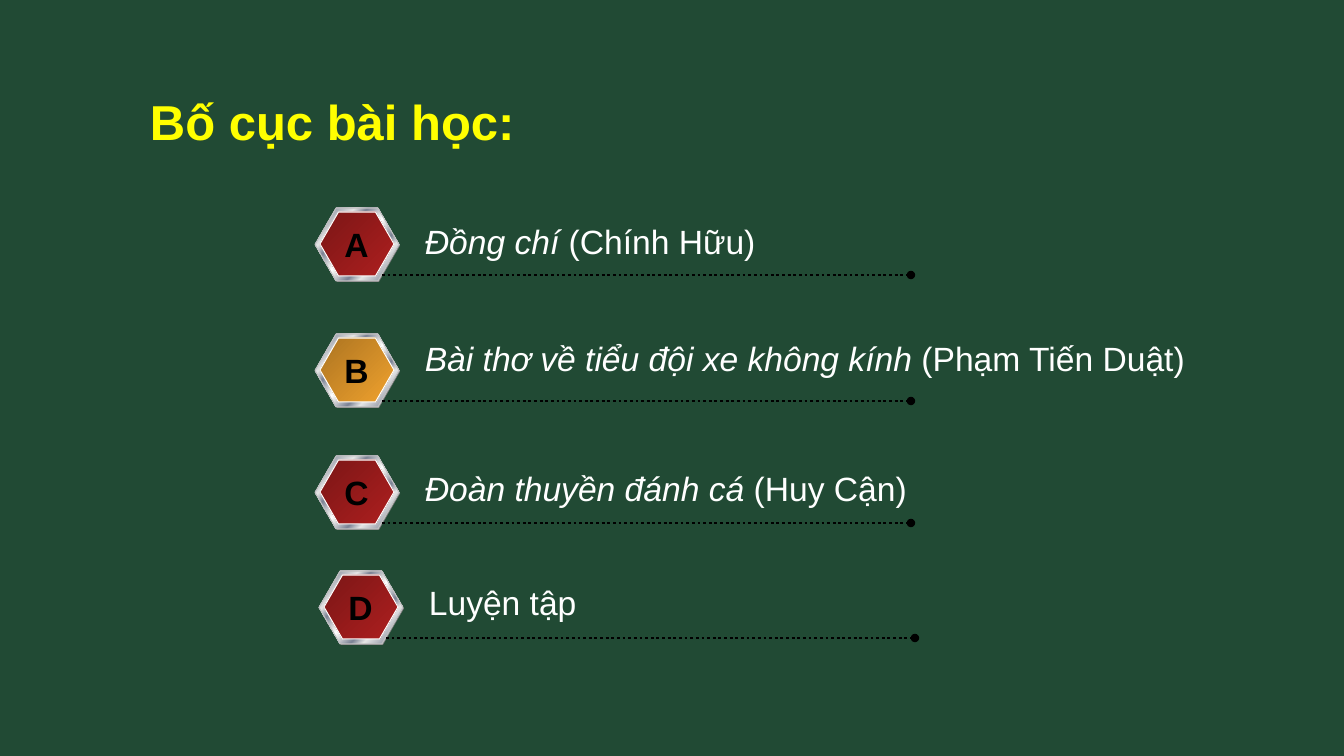
from lxml import etree
from pptx import Presentation
from pptx.dml.color import RGBColor as RGB
from pptx.enum.dml import MSO_LINE as Dash
from pptx.enum.shapes import MSO_CONNECTOR as Link, MSO_SHAPE as Shape
from pptx.enum.text import MSO_ANCHOR as Anchor, MSO_AUTO_SIZE as Fit, PP_ALIGN as Align
from pptx.oxml.ns import qn
from pptx.util import Emu, Pt

TITLE = "Bố cục bài học:"

GREEN = RGB(0x21, 0x4A, 0x34)
YELLOW = RGB(0xFF, 0xFF, 0x00)
WHITE = RGB(0xFF, 0xFF, 0xFF)
BLACK = RGB(0x00, 0x00, 0x00)
GREY = RGB(0x80, 0x80, 0x80)
SILVER = RGB(0xC0, 0xC0, 0xC0)
LIGHT = RGB(0xE6, 0xE6, 0xE6)
STEEL = RGB(0x7D, 0x84, 0x96)

RED_FADE = [(0, RGB(0x7C, 0x16, 0x16)), (100, RGB(0xAD, 0x1F, 0x1F))]
GOLD_FADE = [(0, RGB(0xAC, 0x74, 0x21)), (100, RGB(0xF0, 0xA2, 0x2E))]
CHROME = [(0, LIGHT), (7, STEEL), (26, LIGHT), (34, STEEL), (46, LIGHT), (50, WHITE),
          (54, LIGHT), (66, STEEL), (74, LIGHT), (93, STEEL), (100, LIGHT)]

# letter, italic part, upright part, left, top, text top, text width, fade
ROWS = [
    ("A", "Đồng chí ", "(Chính Hữu)", 315, 208, 216, 354, RED_FADE),
    ("B", "Bài thơ về tiểu đội xe không kính ", "(Phạm Tiến Duật)", 315, 334, 333, 789, GOLD_FADE),
    ("C", "Đoàn thuyền đánh cá ", "(Huy Cận)", 315, 456, 463, 507, RED_FADE),
    ("D", "", "Luyện tập", 319, 571, 577, 169, RED_FADE),
]


def px(*sizes):
    return [Emu(round(size * 914400 / 100.8)) for size in sizes]


def fade(shape, stops):
    """Fill the shape with a gradient running down to the right."""
    shape.fill.gradient()
    grad = shape._element.spPr.find(qn("a:gradFill"))
    for child in list(grad):
        grad.remove(child)
    group = etree.SubElement(grad, qn("a:gsLst"))
    for place, color in stops:
        stop = etree.SubElement(group, qn("a:gs"), pos=str(place * 1000))
        etree.SubElement(stop, qn("a:srgbClr"), val=str(color))
    etree.SubElement(grad, qn("a:lin"), ang="2700000", scaled="1")


def hexagon(shapes, box, fill, edge=None):
    shape = shapes.add_shape(Shape.HEXAGON, *px(*box))
    shape.adjustments[0] = 0.289
    shape.shadow.inherit = False
    if isinstance(fill, list):
        fade(shape, fill)
    else:
        shape.fill.solid()
        shape.fill.fore_color.rgb = fill
    if edge is None:
        shape.line.fill.background()
    else:
        shape.line.color.rgb = edge
        shape.line.width = Pt(0.75)


def dots(shapes, left, right, y):
    """Draw a dotted rule that ends in a round dot."""
    rule = shapes.add_connector(Link.STRAIGHT, *px(left, y, right, y))
    rule.line.color.rgb = BLACK
    rule.line.width = Pt(2)
    rule.line.dash_style = Dash.ROUND_DOT
    etree.SubElement(rule.line._get_or_add_ln(), qn("a:tailEnd"), type="oval")
    etree.SubElement(rule._element.spPr, qn("a:effectLst"))


def label(shapes, box, runs, size, color, bold=False, wrap=False):
    """Add a text box; runs are pairs of text and italic."""
    frame = shapes.add_textbox(*px(*box)).text_frame
    frame.word_wrap = wrap
    frame.auto_size = Fit.NONE if wrap else Fit.SHAPE_TO_FIT_TEXT
    para = frame.paragraphs[0]
    para.font.name = "Arial"
    para.font.size = Pt(size)
    para.font.bold = bold
    para.font.color.rgb = color
    for text, slant in runs:
        if text:
            run = para.add_run()
            run.text = text
            run.font.italic = slant
    return frame


def add_row(slide, letter, work, rest, left, top, text_top, width, stops):
    shapes = slide.shapes.add_group_shape().shapes
    hexagon(shapes, (left + 1, top + 1, 84, 73), GREY)
    hexagon(shapes, (left, top, 84, 73), CHROME, SILVER)
    hexagon(shapes, (left + 5, top + 4, 74, 64), stops, WHITE)
    dots(shapes, left + 67, left + 596, top + 67)
    label(shapes, (left + 100, text_top, width, 51), [(work, True), (rest, False)], 24, WHITE)
    mark = label(shapes, (left + 19, top + 11, 45, 51), [(letter, False)], 24, BLACK, bold=True)
    mark.paragraphs[0].alignment = Align.CENTER


def main():
    deck = Presentation()
    deck.slide_width, deck.slide_height = px(1344, 756)
    slide = deck.slides.add_slide(deck.slide_layouts[6])
    slide.background.fill.solid()
    slide.background.fill.fore_color.rgb = GREEN
    for row in ROWS:
        add_row(slide, *row)
    head = label(slide.shapes, (140, 52, 1159, 146), [(TITLE, False)], 35, YELLOW,
                 bold=True, wrap=True)
    head.vertical_anchor = Anchor.MIDDLE
    head.paragraphs[0].line_spacing = 0.9
    deck.save("out.pptx")


if __name__ == "__main__":
    main()
